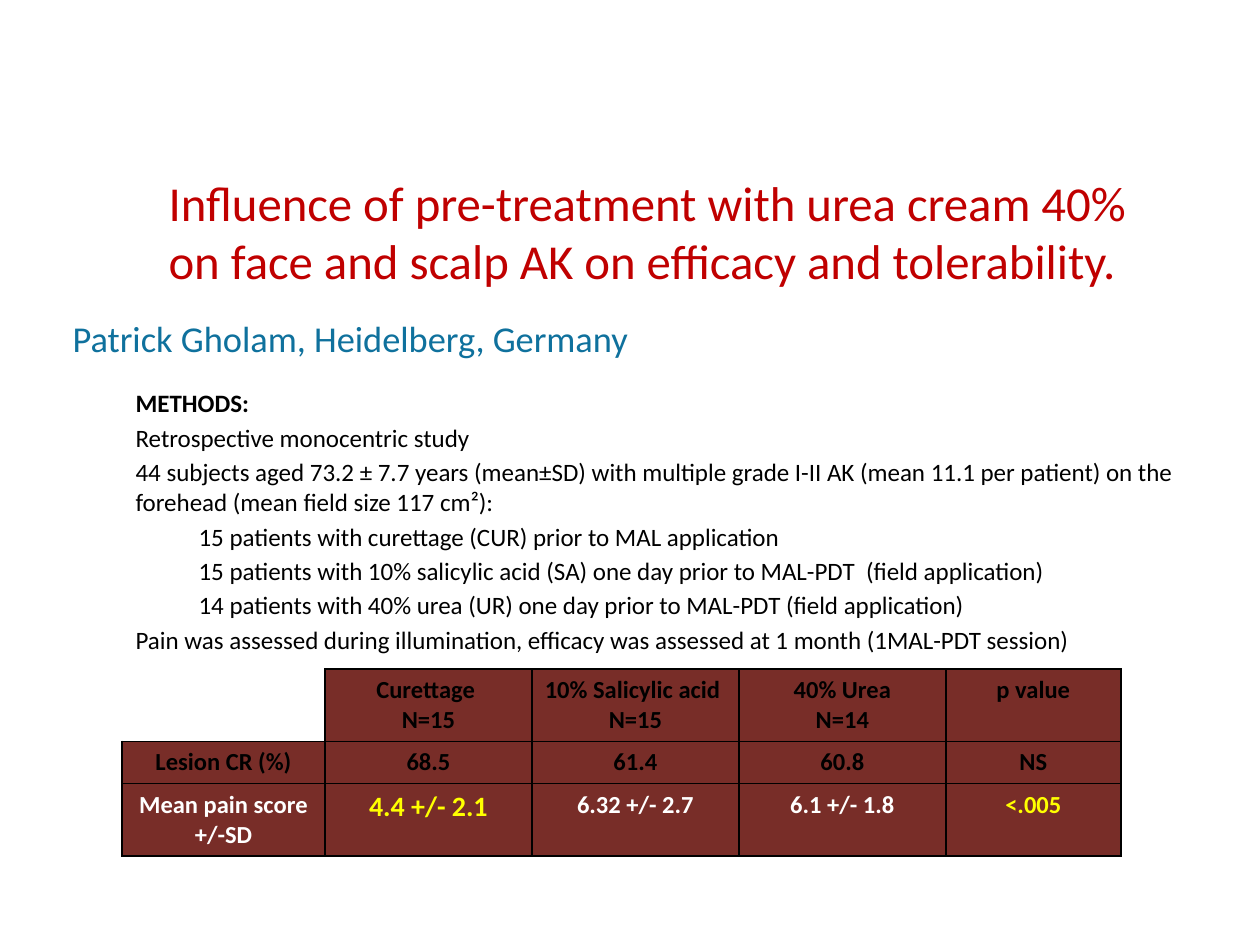
from dataclasses import dataclass

from lxml.etree import SubElement
from pptx import Presentation
from pptx.dml.color import RGBColor
from pptx.enum.text import MSO_ANCHOR, MSO_AUTO_SIZE, PP_ALIGN
from pptx.oxml.ns import qn
from pptx.util import Emu, Pt


@dataclass(frozen=True)
class Theme:
    font: str = "Calibri"
    title: str = "C00000"
    author: str = "0F719D"
    ink: str = "000000"
    light: str = "FFFFFF"
    accent: str = "FFFF00"
    cell: str = "782D28"
    title_size: float = 27.9
    author_size: float = 20.8
    body_size: float = 14.3
    table_size: float = 14
    strong_size: float = 16


THEME = Theme()

TITLE = "Influence of pre-treatment with urea cream 40% on face and scalp AK on efficacy and tolerability."
AUTHOR = "Patrick Gholam, Heidelberg, Germany"
METHODS = [
    (1, "METHODS:"),
    (1, "Retrospective monocentric study"),
    (1, "44 subjects aged 73.2 ± 7.7 years (mean±SD) with multiple grade I-II AK "
        "(mean 11.1 per patient) on the forehead (mean field size 117 cm²):"),
    (2, "15 patients with curettage (CUR) prior to MAL application"),
    (2, "15 patients with 10% salicylic acid (SA) one day prior to MAL-PDT  (field application)"),
    (2, "14 patients with 40% urea (UR) one day prior to MAL-PDT (field application)"),
    (1, "Pain was assessed during illumination, efficacy was assessed at 1 month (1MAL-PDT session)"),
]
RESULTS = [
    ["", "Curettage \nN=15", "10% Salicylic acid \nN=15", "40% Urea\nN=14", "p value"],
    ["Lesion CR (%)", "68.5", "61.4", "60.8", "NS"],
    ["Mean pain score +/-SD", "4.4 +/- 2.1", "6.32 +/- 2.7", "6.1 +/- 1.8", "<.005"],
]
ROW_COLORS = [THEME.ink, THEME.ink, THEME.light]
ROW_ANCHORS = [MSO_ANCHOR.TOP, MSO_ANCHOR.MIDDLE, MSO_ANCHOR.TOP]
HIGHLIGHTS = {(2, 1): THEME.strong_size, (2, 4): THEME.table_size}

TITLE_AREA = (156, 152, 1041, 158)
BODY_AREA = (60, 310, 1172, 336)
TABLE_ORIGIN = (122, 669)
COLUMN_WIDTHS = [203, 207, 207, 207, 175]
ROW_HEIGHTS = [72, 42, 72]
INDENT = 63


def px(value):
    return Emu(round(value * 914400 / 126))


def add_span(para, text, size, color, bold=False):
    span = para.add_run()
    span.text = text
    span.font.name = THEME.font
    span.font.size = Pt(size)
    span.font.bold = bold
    span.font.color.rgb = RGBColor.from_string(color)


def prepare_box(box, area, anchor):
    box.left, box.top, box.width, box.height = map(px, area)
    frame = box.text_frame
    frame.auto_size = MSO_AUTO_SIZE.NONE
    frame.word_wrap = True
    frame.vertical_anchor = anchor
    return frame


def format_item(para, depth, space_before):
    para.alignment = PP_ALIGN.LEFT
    para.space_before = Pt(space_before)
    properties = para._p.get_or_add_pPr()
    properties.set("marL", str(px(depth * INDENT)))
    properties.set("indent", "0")
    SubElement(properties, qn("a:buNone"))


def add_border(cell, side, visible):
    line = SubElement(cell._tc.get_or_add_tcPr(), qn(f"a:ln{side}"), w=str(Pt(1)))
    if visible:
        fill = SubElement(line, qn("a:solidFill"))
        SubElement(fill, qn("a:srgbClr"), val=THEME.ink)
    else:
        SubElement(line, qn("a:noFill"))


def fill_title(page):
    frame = prepare_box(page.shapes.title, TITLE_AREA, MSO_ANCHOR.MIDDLE)
    para = frame.paragraphs[0]
    para.alignment = PP_ALIGN.LEFT
    add_span(para, TITLE, THEME.title_size, THEME.title)


def fill_body(page):
    frame = prepare_box(page.placeholders[1], BODY_AREA, MSO_ANCHOR.TOP)
    para = frame.paragraphs[0]
    format_item(para, 0, 0)
    add_span(para, AUTHOR, THEME.author_size, THEME.author)
    for index, (depth, text) in enumerate(METHODS):
        para = frame.add_paragraph()
        para.level = 1
        format_item(para, depth, 2.5 if index else 16)
        add_span(para, text, THEME.body_size, THEME.ink, bold=index == 0)


def fill_cell(cell, row, column, text):
    corner = (row, column) == (0, 0)
    for side in "LRTB":
        add_border(cell, side, not corner or side in "RB")
    cell.fill.solid()
    cell.fill.fore_color.rgb = RGBColor.from_string(THEME.light if corner else THEME.cell)
    cell.vertical_anchor = ROW_ANCHORS[row]
    highlighted = (row, column) in HIGHLIGHTS
    size = HIGHLIGHTS.get((row, column), THEME.table_size)
    color = THEME.accent if highlighted else ROW_COLORS[row]
    frame = cell.text_frame
    for index, line in enumerate(text.splitlines()):
        para = frame.add_paragraph() if index else frame.paragraphs[0]
        para.alignment = PP_ALIGN.CENTER
        add_span(para, line, size, color, bold=True)


def add_results(page):
    extent = (sum(COLUMN_WIDTHS), sum(ROW_HEIGHTS))
    table = page.shapes.add_table(
        len(RESULTS), len(COLUMN_WIDTHS), *map(px, TABLE_ORIGIN + extent)
    ).table
    table.first_row = False
    table.horz_banding = False
    for column, width in zip(table.columns, COLUMN_WIDTHS):
        column.width = px(width)
    for row, height in zip(table.rows, ROW_HEIGHTS):
        row.height = px(height)
    for row, values in enumerate(RESULTS):
        for column, text in enumerate(values):
            fill_cell(table.cell(row, column), row, column, text)


def main():
    deck = Presentation()
    deck.slide_width, deck.slide_height = px(1260), px(945)
    page = deck.slides.add_slide(deck.slide_layouts[1])
    fill_title(page)
    fill_body(page)
    add_results(page)
    deck.save("out.pptx")


if __name__ == "__main__":
    main()
